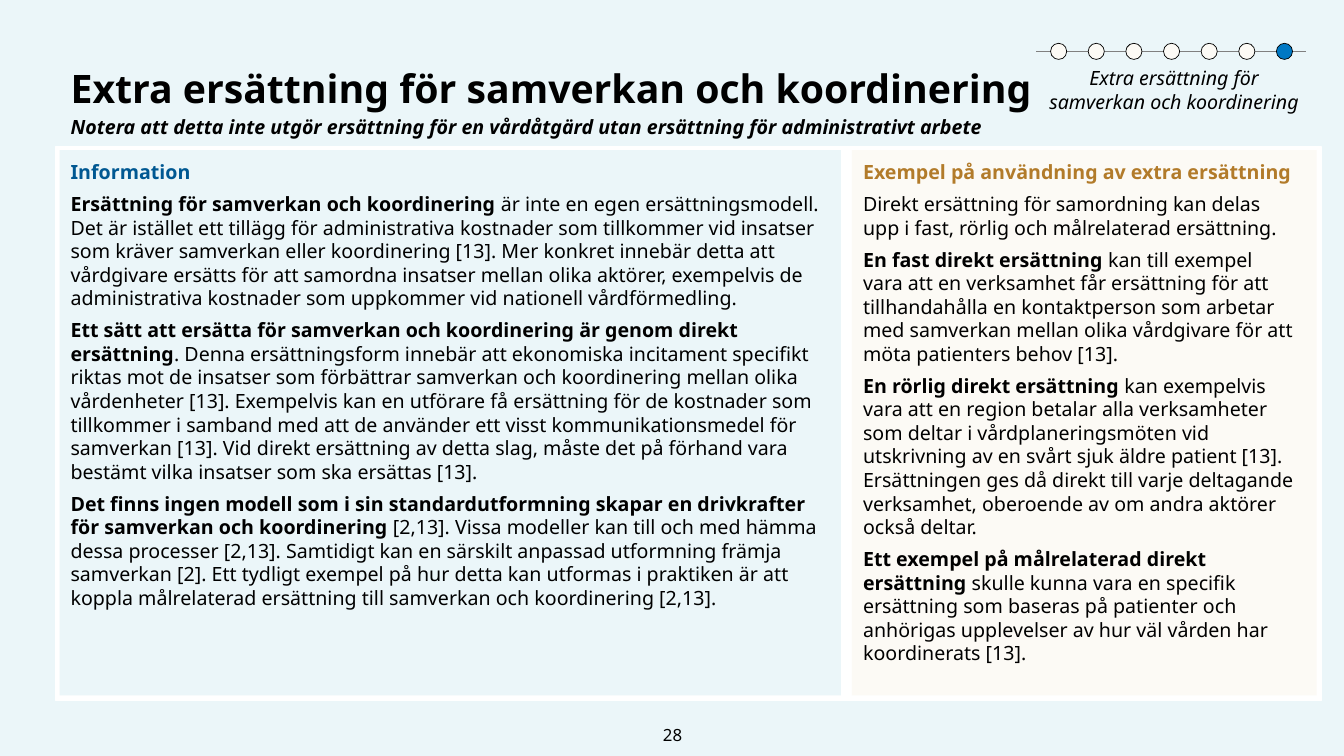
from dataclasses import dataclass

from lxml import etree
from pptx import Presentation
from pptx.dml.color import RGBColor
from pptx.enum import shapes, text
from pptx.oxml.ns import qn
from pptx.util import Inches, Pt


@dataclass(frozen=True)
class Theme:
    font: str = "Noto Sans"
    background: str = "EBF6F9"
    white: str = "FFFFFF"
    cream: str = "FCFAF5"
    black: str = "000000"
    gray: str = "808080"
    blue: str = "005892"
    active: str = "0078C4"
    gold: str = "B27B2A"
    title_size: int = 28
    body_size: int = 14
    number_size: int = 12
    body_spacing: float = 1.0
    heading_spacing: float = 1.1


# Each paragraph is a bold lead and the regular text after it.
INFORMATION = [
    ("Ersättning för samverkan och koordinering ",
     "är inte en egen ersättningsmodell. Det är istället ett tillägg för administrativa "
     "kostnader som tillkommer vid insatser som kräver samverkan eller koordinering [13]. "
     "Mer konkret innebär detta att vårdgivare ersätts för att samordna insatser mellan "
     "olika aktörer, exempelvis de administrativa kostnader som uppkommer vid nationell "
     "vårdförmedling."),
    ("Ett sätt att ersätta för samverkan och koordinering är genom direkt ersättning",
     ". Denna ersättningsform innebär att ekonomiska incitament specifikt riktas mot de "
     "insatser som förbättrar samverkan och koordinering mellan olika vårdenheter [13]. "
     "Exempelvis kan en utförare få ersättning för de kostnader som tillkommer i samband "
     "med att de använder ett visst kommunikationsmedel för samverkan [13]. Vid direkt "
     "ersättning av detta slag, måste det på förhand vara bestämt vilka insatser som ska "
     "ersättas [13]."),
    ("Det finns ingen modell som i sin standardutformning skapar en drivkrafter för "
     "samverkan och koordinering ",
     "[2,13]. Vissa modeller kan till och med hämma dessa processer [2,13]. Samtidigt kan "
     "en särskilt anpassad utformning främja samverkan [2]. Ett tydligt exempel på hur "
     "detta kan utformas i praktiken är att koppla målrelaterad ersättning till samverkan "
     "och koordinering [2,13]."),
]
EXAMPLES = [
    ("", "Direkt ersättning för samordning kan delas upp i fast, rörlig och målrelaterad "
     "ersättning."),
    ("En fast direkt ersättning ",
     "kan till exempel vara att en verksamhet får ersättning för att tillhandahålla en "
     "kontaktperson som arbetar med samverkan mellan olika vårdgivare för att möta "
     "patienters behov [13]."),
    ("En rörlig direkt ersättning ",
     "kan exempelvis vara att en region betalar alla verksamheter som deltar i "
     "vårdplaneringsmöten vid utskrivning av en svårt sjuk äldre patient [13]. "
     "Ersättningen ges då direkt till varje deltagande verksamhet, oberoende av om andra "
     "aktörer också deltar."),
    ("Ett exempel på målrelaterad direkt ersättning ",
     "skulle kunna vara en specifik ersättning som baseras på patienter och anhörigas "
     "upplevelser av hur väl vården har koordinerats [13]."),
]


class SlideBuilder:
    def __init__(self, presentation, theme):
        self.theme = theme
        self.slide = presentation.slides.add_slide(presentation.slide_layouts[5])
        fill = self.slide.background.fill
        fill.solid()
        fill.fore_color.rgb = RGBColor.from_string(theme.background)

    def prepare_frame(self, shape, top_inset=0.0):
        frame = shape.text_frame
        frame.word_wrap = True
        frame.auto_size = text.MSO_AUTO_SIZE.NONE
        frame.vertical_anchor = text.MSO_ANCHOR.TOP
        frame.margin_left, frame.margin_top = 0, Inches(top_inset)
        frame.margin_right, frame.margin_bottom = Inches(0.1), Inches(0.05)
        return frame

    def format_run(self, run, size, color, bold=False, italic=False):
        font = run.font
        font.name, font.size = self.theme.font, Pt(size)
        font.bold, font.italic = bold, italic
        font.color.rgb = RGBColor.from_string(color)

    def title(self, content, left, top, width, height):
        shape = self.slide.shapes.title
        shape.left, shape.top = Inches(left), Inches(top)
        shape.width, shape.height = Inches(width), Inches(height)
        paragraph = self.prepare_frame(shape).paragraphs[0]
        paragraph.text = content
        paragraph.alignment = text.PP_ALIGN.LEFT
        paragraph.line_spacing = self.theme.heading_spacing
        self.format_run(paragraph.runs[0], self.theme.title_size, self.theme.black, bold=True)

    def text_box(self, left, top, width, height, top_inset=0.0):
        box = self.slide.shapes.add_textbox(
            Inches(left), Inches(top), Inches(width), Inches(height))
        return self.prepare_frame(box, top_inset)

    def label(self, content, left, top, width, height, size, spacing=1.0,
              centered=False, top_inset=0.0, anchor=text.MSO_ANCHOR.TOP, **style):
        frame = self.text_box(left, top, width, height, top_inset)
        frame.vertical_anchor = anchor
        paragraph = frame.paragraphs[0]
        paragraph.text = content
        paragraph.line_spacing = spacing
        if centered:
            paragraph.alignment = text.PP_ALIGN.CENTER
        self.format_run(paragraph.runs[0], size, self.theme.black, **style)

    def shape(self, kind, left, top, width, height, fill, line=None, line_width=1.0,
              parent=None):
        shape = (parent or self.slide).shapes.add_shape(
            kind, Inches(left), Inches(top), Inches(width), Inches(height))
        shape.shadow.inherit = False
        shape.fill.solid()
        shape.fill.fore_color.rgb = RGBColor.from_string(fill)
        if line:
            shape.line.color.rgb = RGBColor.from_string(line)
            shape.line.width = Pt(line_width)
        else:
            shape.line.fill.background()

    def panel(self, left, width, fill, heading, heading_color, paragraphs):
        """Draw a filled column with a coloured heading and body paragraphs."""
        self.shape(shapes.MSO_SHAPE.RECTANGLE, left, 1.49, width, 5.41, fill)
        frame = self.text_box(left + 0.11, 1.59, width - 0.22, 5.2)
        size = self.theme.body_size
        frame.text = heading
        self.format_run(frame.paragraphs[0].runs[0], size, heading_color, bold=True)
        for parts in paragraphs:
            paragraph = frame.add_paragraph()
            for part, bold in zip(parts, (True, False)):
                if part:
                    run = paragraph.add_run()
                    run.text = part
                    self.format_run(run, size, self.theme.black, bold=bold)
        for paragraph in frame.paragraphs:
            paragraph.line_spacing = self.theme.body_spacing
            paragraph.space_after = Pt(6)

    def progress(self, steps, current):
        """Draw a line of step dots with the current one highlighted."""
        group = self.slide.shapes.add_group_shape()
        line = group.shapes.add_connector(
            shapes.MSO_CONNECTOR.STRAIGHT,
            Inches(12.95), Inches(0.51), Inches(10.28), Inches(0.51))
        line.line.color.rgb = RGBColor.from_string(self.theme.gray)
        line.line.width = Pt(1)
        etree.SubElement(line._element.spPr, qn("a:effectLst"))
        gap = (12.66 - 10.42) / (steps - 1)
        for step in range(steps):
            fill = self.theme.active if step == current else self.theme.cream
            self.shape(shapes.MSO_SHAPE.OVAL, 10.42 + step * gap, 0.43, 0.16, 0.16,
                       fill, self.theme.black, 0.5, parent=group)


def main():
    theme = Theme()
    presentation = Presentation()
    presentation.slide_width, presentation.slide_height = Inches(13.33), Inches(7.5)
    builder = SlideBuilder(presentation, theme)
    topic = "Extra ersättning för samverkan och koordinering"

    builder.shape(shapes.MSO_SHAPE.RECTANGLE, 0.55, 1.46, 12.56, 5.49,
                  theme.white, theme.white)
    builder.title(topic, 0.7, 0.59, 11.94, 0.8)
    builder.label("28", 6.16, 7.09, 1.12, 0.4, theme.number_size, centered=True,
                  top_inset=0.05, anchor=text.MSO_ANCHOR.MIDDLE)
    builder.panel(8.45, 4.61, theme.cream, "Exempel på användning av extra ersättning",
                  theme.gold, EXAMPLES)
    builder.panel(0.59, 7.75, theme.background, "Information", theme.blue, INFORMATION)
    builder.label("Notera att detta inte utgör ersättning för en vårdåtgärd utan ersättning "
                  "för administrativt arbete", 0.7, 1.12, 11.94, 0.43, theme.body_size,
                  theme.heading_spacing, bold=True, italic=True)
    builder.label(topic, 10.32, 0.61, 2.75, 0.16, theme.body_size, theme.body_spacing,
                  centered=True, top_inset=0.05, italic=True)
    builder.progress(steps=7, current=6)
    presentation.save("out.pptx")


if __name__ == "__main__":
    main()
